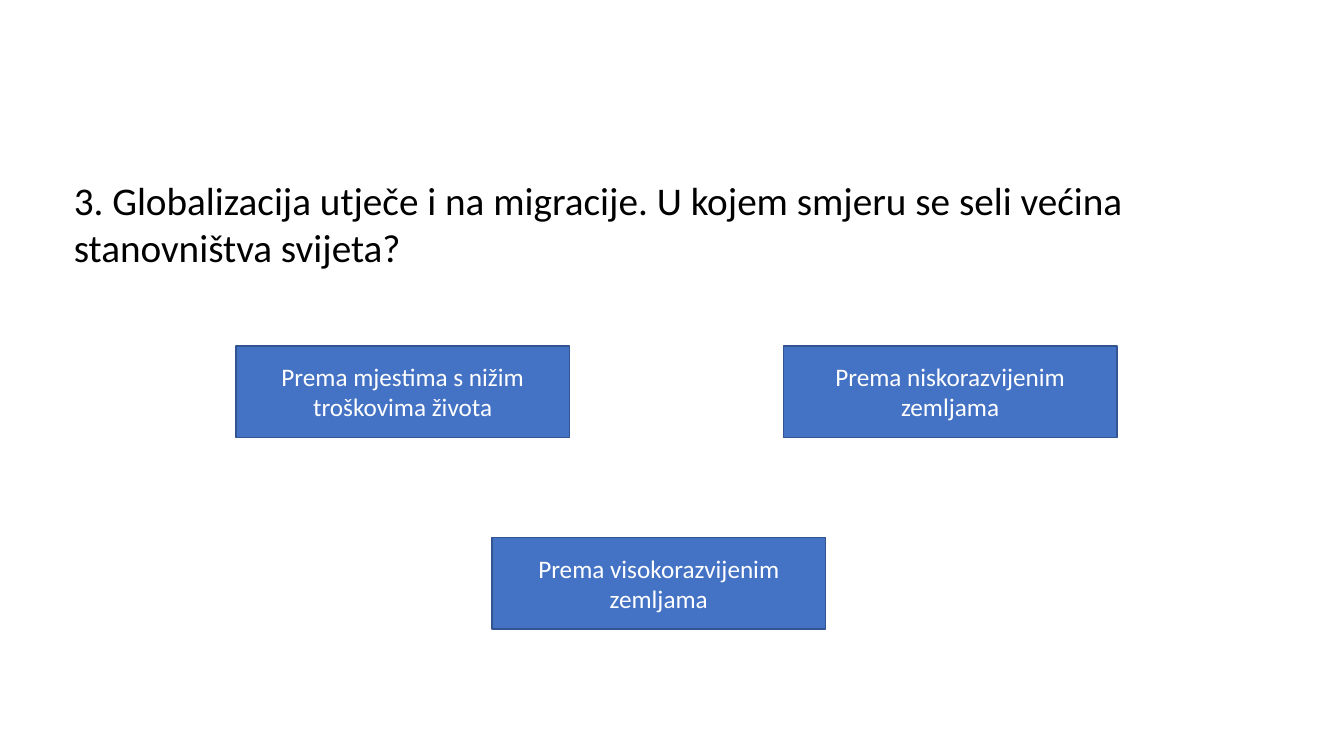
from pptx import Presentation
from pptx.dml.color import RGBColor
from pptx.enum.shapes import MSO_SHAPE
from pptx.enum.text import MSO_ANCHOR, MSO_AUTO_SIZE, PP_ALIGN
from pptx.util import Pt

BLUE = RGBColor(0x44, 0x72, 0xC4)
DARK_BLUE = RGBColor(0x32, 0x54, 0x91)
WHITE = RGBColor(0xFF, 0xFF, 0xFF)
BLACK = RGBColor(0x00, 0x00, 0x00)


def set_text(tf, text, size, color, align, anchor):
    tf.text = text
    tf.word_wrap = True
    tf.vertical_anchor = anchor
    p = tf.paragraphs[0]
    p.alignment = align
    font = p.runs[0].font
    font.name = "Calibri"
    font.size = Pt(size)
    font.color.rgb = color


prs = Presentation()
prs.slide_width = Pt(960)
prs.slide_height = Pt(540)
s = prs.slides.add_slide(prs.slide_layouts[5])

title = s.shapes.title
title.left, title.top, title.width, title.height = Pt(45.5), Pt(122.4), Pt(850), Pt(75)
question = "3. Globalizacija utječe i na migracije. U kojem smjeru se seli većina stanovništva svijeta?"
set_text(title.text_frame, question, 28, BLACK, PP_ALIGN.LEFT, MSO_ANCHOR.TOP)
title.text_frame.auto_size = MSO_AUTO_SIZE.NONE

answers = [
    ("Prema mjestima s nižim troškovima života", 168.5, 247),
    ("Prema niskorazvijenim zemljama", 559.5, 247),
    ("Prema visokorazvijenim zemljama", 351.4, 383.8),
]
for text, left, top in answers:
    sp = s.shapes.add_shape(MSO_SHAPE.RECTANGLE, Pt(left), Pt(top), Pt(238.3), Pt(65.5))
    sp.shadow.inherit = False
    sp.fill.solid()
    sp.fill.fore_color.rgb = BLUE
    sp.line.color.rgb = DARK_BLUE
    sp.line.width = Pt(1)
    set_text(sp.text_frame, text, 18, WHITE, PP_ALIGN.CENTER, MSO_ANCHOR.MIDDLE)

prs.save("out.pptx")
